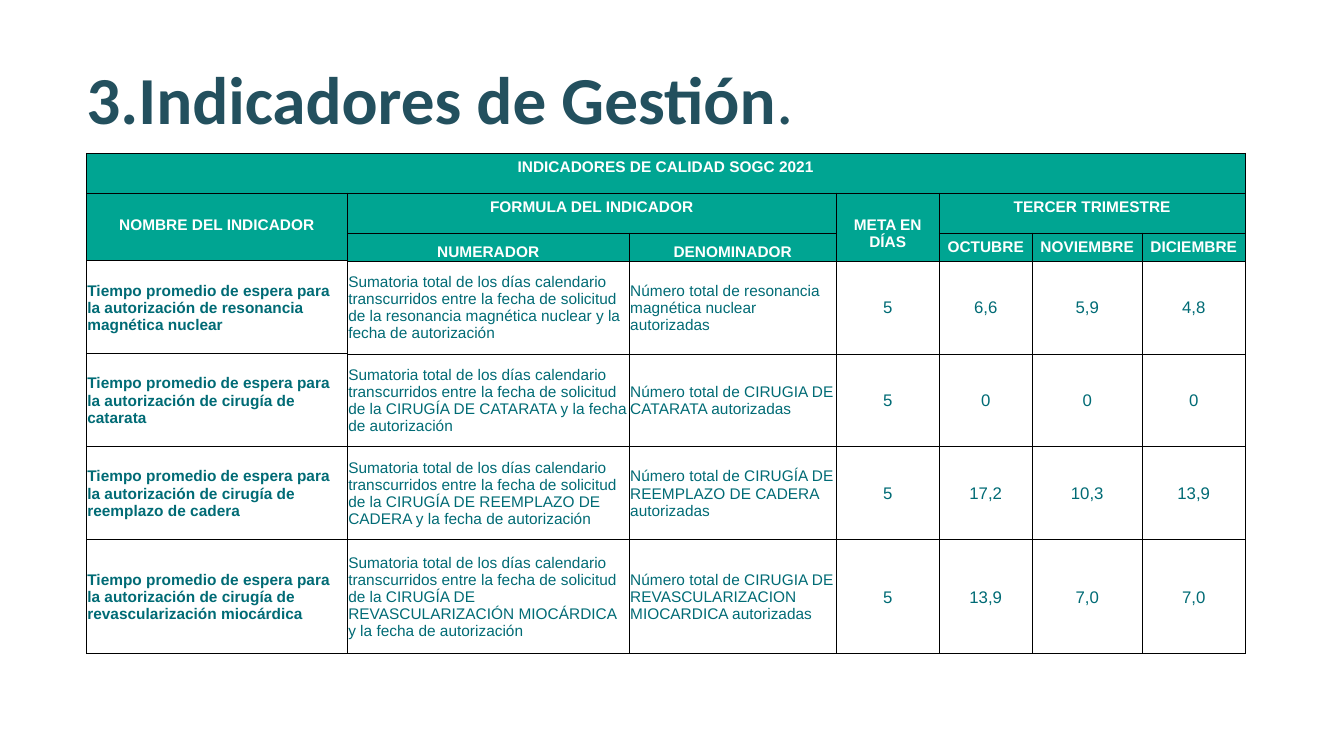
from lxml import etree
from pptx import Presentation
from pptx.dml.color import RGBColor
from pptx.enum.text import MSO_ANCHOR, MSO_AUTO_SIZE, PP_ALIGN
from pptx.oxml.ns import qn
from pptx.util import Pt

TOP, MIDDLE, BOTTOM = MSO_ANCHOR.TOP, MSO_ANCHOR.MIDDLE, MSO_ANCHOR.BOTTOM
LEFT, CENTER = PP_ALIGN.LEFT, PP_ALIGN.CENTER
FIT_SHAPE = MSO_AUTO_SIZE.SHAPE_TO_FIT_TEXT

COLORS = {"title": "23505E", "header": "00A592", "white": "FFFFFF",
          "body": "006B75", "border": "000000"}

WIDE = {"margin_left": Pt(8), "margin_right": Pt(8), "margin_top": Pt(4), "margin_bottom": Pt(4)}
TALL = {**WIDE, "margin_top": Pt(17)}
TIGHT = {"margin_left": Pt(0.7), "margin_right": Pt(0.7), "margin_top": Pt(0.7), "margin_bottom": Pt(0)}

HEADER = {"size": 11, "bold": True, "color": "white", "align": CENTER, "fill": "header"}
BODY = {"size": 11, "bold": False, "color": "body", "align": LEFT, "fill": None,
        "cell": {**TIGHT, "vertical_anchor": MIDDLE}}
FORMATS = {
    "group": {**HEADER, "cell": {**WIDE, "vertical_anchor": TOP}},
    "tall": {**HEADER, "cell": {**TALL, "vertical_anchor": TOP}},
    "formula": {**HEADER, "cell": {**TIGHT, "vertical_anchor": BOTTOM}},
    "month": {**HEADER, "cell": {**TIGHT, "vertical_anchor": MIDDLE}},
    "name": {**BODY, "bold": True},
    "text": BODY,
    "value": {**BODY, "size": 12, "align": CENTER},
}

COLUMN_WIDTHS = [186.4, 201.4, 147.9, 73.6, 66.4, 78.6, 73.6]
ROW_HEIGHTS = [28.5, 28.5, 20, 66.4, 66.4, 66.4, 81.4]
SPANS = [(0, 0, 0, 6), (1, 0, 2, 0), (1, 1, 1, 2), (1, 3, 2, 3), (1, 4, 1, 6)]
HEAVY_BORDERS = {(2, 0): "B", (3, 0): "LRTB", (3, 1): "L", (4, 0): "T"}

HEADER_TEXTS = [
    ["INDICADORES DE CALIDAD SOGC 2021", "", "", "", "", "", ""],
    ["NOMBRE DEL INDICADOR", "FORMULA DEL INDICADOR", "", "META EN DÍAS", "TERCER TRIMESTRE", "", ""],
    ["", "NUMERADOR", "DENOMINADOR", "", "OCTUBRE", "NOVIEMBRE", "DICIEMBRE"],
]
HEADER_FORMATS = [
    ["group"] * 7,
    ["tall", "group", "group", "tall", "group", "group", "group"],
    ["tall", "formula", "formula", "tall", "month", "month", "month"],
]
NAME = "Tiempo promedio de espera para la autorización de "
NUMERATOR = ("Sumatoria total de los días calendario transcurridos entre la fecha de solicitud "
             "de la {} y la fecha de autorización")
DENOMINATOR = "Número total de {} autorizadas"
INDICATORS = [
    ("resonancia magnética nuclear", "resonancia magnética nuclear",
     "resonancia magnética nuclear", "6,6", "5,9", "4,8"),
    ("cirugía de catarata", "CIRUGÍA DE CATARATA", "CIRUGIA DE CATARATA", "0", "0", "0"),
    ("cirugía de reemplazo de cadera", "CIRUGÍA DE REEMPLAZO DE CADERA",
     "CIRUGÍA DE REEMPLAZO DE CADERA", "17,2", "10,3", "13,9"),
    ("cirugía de revascularización miocárdica", "CIRUGÍA DE REVASCULARIZACIÓN MIOCÁRDICA",
     "CIRUGIA DE REVASCULARIZACION MIOCARDICA", "13,9", "7,0", "7,0"),
]
BODY_FORMATS = ["name", "text", "text"] + ["value"] * 4


class SlideBuilder:
    def __init__(self, slide):
        self.slide = slide
        self.title_font = "Calibri"
        self.table_font = "Arial"

    def apply(self, target, values):
        for name, value in values.items():
            setattr(target, name, value)

    def color(self, name):
        return RGBColor.from_string(COLORS[name])

    def run(self, paragraph, text, font, size, bold, color):
        run = paragraph.add_run()
        run.text = text
        self.apply(run.font, {"name": font, "size": Pt(size), "bold": bold})
        run.font.color.rgb = self.color(color)

    def title(self, left, top, width, height, parts):
        shape = self.slide.shapes.add_textbox(Pt(left), Pt(top), Pt(width), Pt(height))
        self.apply(shape.text_frame, {"word_wrap": True, "auto_size": FIT_SHAPE})
        for text, bold in parts:
            self.run(shape.text_frame.paragraphs[0], text, self.title_font, 48, bold, "title")

    def borders(self, cell, heavy_sides):
        properties = cell._tc.get_or_add_tcPr()
        for index, side in enumerate("LRTB"):
            width = Pt(1 if side in heavy_sides else 0.5)
            line = etree.Element(qn(f"a:ln{side}"), w=str(int(width)))
            fill = etree.SubElement(line, qn("a:solidFill"))
            etree.SubElement(fill, qn("a:srgbClr"), val=COLORS["border"])
            properties.insert(index, line)

    def cell(self, cell, text, style, heavy_sides):
        self.apply(cell, style["cell"])
        if style["fill"]:
            cell.fill.solid()
            cell.fill.fore_color.rgb = self.color(style["fill"])
        else:
            cell.fill.background()
        self.borders(cell, heavy_sides)
        if text:
            paragraph = cell.text_frame.paragraphs[0]
            paragraph.alignment = style["align"]
            self.run(paragraph, text, self.table_font, style["size"], style["bold"], style["color"])

    def table(self, left, top, texts, formats):
        table = self.slide.shapes.add_table(
            len(ROW_HEIGHTS), len(COLUMN_WIDTHS), Pt(left), Pt(top),
            Pt(sum(COLUMN_WIDTHS)), Pt(sum(ROW_HEIGHTS))).table
        self.apply(table, {"first_row": False, "horz_banding": False})
        for column, width in zip(table.columns, COLUMN_WIDTHS):
            column.width = Pt(width)
        for row, height in zip(table.rows, ROW_HEIGHTS):
            row.height = Pt(height)
        for first_row, first_column, last_row, last_column in SPANS:
            table.cell(first_row, first_column).merge(table.cell(last_row, last_column))
        for row, (row_texts, row_formats) in enumerate(zip(texts, formats)):
            for column, (text, name) in enumerate(zip(row_texts, row_formats)):
                self.cell(table.cell(row, column), text, FORMATS[name],
                          HEAVY_BORDERS.get((row, column), ""))


def main():
    presentation = Presentation()
    presentation.slide_width, presentation.slide_height = Pt(960), Pt(540)
    builder = SlideBuilder(presentation.slides.add_slide(presentation.slide_layouts[6]))
    builder.title(54.7, 37.4, 547.2, 65.5, [("3.Indicadores de Gestión", True), (".", False)])
    body_texts = [[NAME + name, NUMERATOR.format(numerator), DENOMINATOR.format(denominator), "5", *months]
                  for name, numerator, denominator, *months in INDICATORS]
    builder.table(61.7, 109.4, HEADER_TEXTS + body_texts,
                  HEADER_FORMATS + [BODY_FORMATS] * len(INDICATORS))
    presentation.save("out.pptx")


if __name__ == "__main__":
    main()
